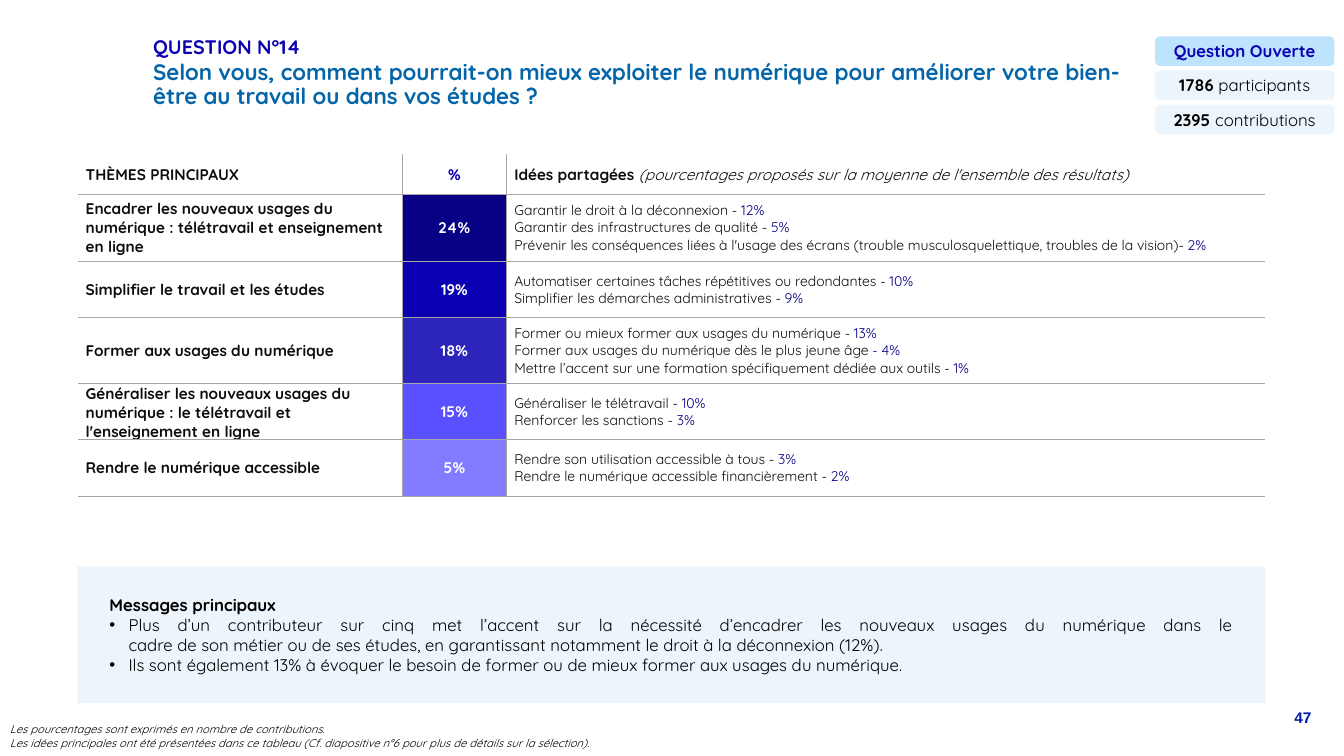
"""Builds the survey slide for question 14: themes table, key messages and participation figures."""
import pptx
import pptx.dml.color
import pptx.enum.shapes
import pptx.enum.text
import pptx.oxml
import pptx.oxml.ns
import pptx.util
from lxml import etree

Cm = pptx.util.Cm
RGBColor = pptx.dml.color.RGBColor
ALIGN = pptx.enum.text.PP_ALIGN
MIDDLE = pptx.enum.text.MSO_ANCHOR.MIDDLE
SHAPES = pptx.enum.shapes.MSO_SHAPE
qn = pptx.oxml.ns.qn

BLACK = RGBColor(0x00, 0x00, 0x00)
INK = RGBColor(0x0D, 0x0D, 0x0D)
WHITE = RGBColor(0xFF, 0xFF, 0xFF)
TITLE_BLUE = RGBColor(0x04, 0x65, 0xA9)
ROYAL = RGBColor(0x0B, 0x00, 0xB2)
NAVY = RGBColor(0x08, 0x00, 0x85)
VIOLET = RGBColor(0x44, 0x38, 0xFF)
LILAC = RGBColor(0x82, 0x7A, 0xFF)
PALE = RGBColor(0xEC, 0xF5, 0xFB)
SKY = RGBColor(0xBD, 0xE3, 0xFD)
PAGE_BLUE = RGBColor(0x01, 0x1C, 0xA3)
GREY = RGBColor(0xA5, 0xA6, 0xA5)


def write(para, spans, size, color, bold=None, italic=None, align=ALIGN.LEFT, face="Quicksand"):
    """Fill a paragraph with (text, font overrides) spans."""
    para.alignment = align
    font = para.font
    font.name, font.size, font.bold, font.italic = face, pptx.util.Pt(size), bold, italic
    font.color.rgb = color
    for text, changes in spans:
        span = para.add_run()
        span.text = text
        for name, value in changes.items():
            if name == "color":
                span.font.color.rgb = value
            else:
                setattr(span.font, name, value)


def add_box(left, top, width, height, shape=None, fill=None):
    """Add a wrapped text box, or a filled shape without outline."""
    place = Cm(left), Cm(top), Cm(width), Cm(height)
    if shape is None:
        box = page.shapes.add_textbox(*place)
    else:
        box = page.shapes.add_shape(shape, *place)
        box.shadow.inherit = False
        box.fill.solid()
        box.fill.fore_color.rgb = fill
        box.line.fill.background()
    box.text_frame.word_wrap = True
    return box


deck = pptx.Presentation()
deck.slide_width, deck.slide_height = Cm(33.87), Cm(19.05)
page = deck.slides.add_slide(deck.slide_layouts[6])

headings = [
    ("QUESTION N°14", 0.86, 28.7, 0.69, 14, ROYAL),
    ("Selon vous, comment pourrait-on mieux exploiter le numérique pour améliorer votre "
     "bien-être au travail ou dans vos études\u00a0?", 1.63, 25.12, 1.02, 16, TITLE_BLUE),
]
for text, top, width, height, size, color in headings:
    box = add_box(3.61, top, width, height)
    box.text_frame.vertical_anchor = MIDDLE
    para = box.text_frame.paragraphs[0]
    para.line_spacing = 0.9
    write(para, [(text, {})], size, color, bold=True)

badges = [
    ([("Question Ouverte", {})], SKY, ROYAL),
    ([("1786 ", {}), ("participants", {"bold": False})], PALE, BLACK),
    ([("2395 ", {}), ("contributions", {"bold": False})], PALE, BLACK),
]
for index, (spans, fill, color) in enumerate(badges):
    badge = add_box(29.11, 0.92 + index * 0.86, 4.52, 0.74, SHAPES.ROUNDED_RECTANGLE, fill)
    badge.text_frame.vertical_anchor = MIDDLE
    write(badge.text_frame.paragraphs[0], spans, 12, color, bold=True, align=ALIGN.CENTER)

themes = [
    ("Encadrer les nouveaux usages du numérique : télétravail et enseignement en ligne",
     "24%", NAVY, 100, 1.7,
     [("Garantir le droit à la déconnexion - ", "12%"),
      ("Garantir des infrastructures de qualité - ", "5%"),
      ("Prévenir les conséquences liées à l'usage des écrans "
       "(trouble musculosquelettique, troubles de la vision)- ", "2%")]),
    ("Simplifier le travail et les études", "19%", ROYAL, 100, 1.42,
     [("Automatiser certaines tâches répétitives ou redondantes - ", "10%"),
      ("Simplifier les démarches administratives - ", "9%")]),
    ("Former aux usages du numérique", "18%", ROYAL, 86, 1.65,
     [("Former ou mieux former aux usages du numérique - ", "13%"),
      ("Former aux usages du numérique dès le plus jeune âge ", "- 4%"),
      ("Mettre l’accent sur une formation spécifiquement dédiée aux outils - ", "1%")]),
    ("Généraliser les nouveaux usages du numérique : le télétravail et l'enseignement en ligne",
     "15%", VIOLET, 88, 1.42,
     [("Généraliser le télétravail - ", "10%"), ("Renforcer les sanctions - ", "3%")]),
    ("Rendre le numérique accessible", "5%", LILAC, 100, 1.42,
     [("Rendre son utilisation accessible à tous - ", "3%"),
      ("Rendre le numérique accessible financièrement - ", "2%")]),
]
table = page.shapes.add_table(
    len(themes) + 1, 3, Cm(1.96), Cm(3.89), Cm(29.93), Cm(8.6)).table
table.first_row = table.horz_banding = False
for column, width in zip(table.columns, (8.18, 2.62, 19.13)):
    column.width = Cm(width)
for row, height in zip(table.rows, [0.99] + [theme[4] for theme in themes]):
    row.height = Cm(height)

for row_index, row in enumerate(table.rows):
    for column_index, cell in enumerate(row.cells):
        cell.vertical_anchor = MIDDLE
        cell.margin_left = cell.margin_right = Cm(0.2)
        cell.margin_top, cell.margin_bottom = Cm(0.02), Cm(0)
        sides = {"L": column_index > 0, "R": column_index < 2, "T": row_index > 0, "B": True}
        properties = cell._tc.get_or_add_tcPr()
        for side, shown in sides.items():
            line = etree.SubElement(properties, qn("a:ln" + side), w="3175")
            if shown:
                paint = etree.SubElement(line, qn("a:solidFill"))
                etree.SubElement(paint, qn("a:srgbClr"), val=str(GREY))
            else:
                etree.SubElement(line, qn("a:noFill"))
        cell.fill.background()

header_note = "(pourcentages proposés sur la moyenne de l'ensemble des résultats)"
headers = [
    ([("THÈMES PRINCIPAUX", {})], INK, ALIGN.LEFT),
    ([("%", {})], ROYAL, ALIGN.CENTER),
    ([("Idées partagées ", {}), (header_note, {"bold": False, "italic": True})], INK, ALIGN.LEFT),
]
for cell, (spans, color, align) in zip(table.rows[0].cells, headers):
    write(cell.text_frame.paragraphs[0], spans, 11, color, bold=True, align=align)

for row_index, (theme, share, fill, opacity, height, ideas) in enumerate(themes, 1):
    theme_cell, share_cell, ideas_cell = table.rows[row_index].cells
    write(theme_cell.text_frame.paragraphs[0], [(theme, {})], 11, INK, bold=True)
    write(share_cell.text_frame.paragraphs[0], [(share, {})], 11, WHITE,
          bold=True, align=ALIGN.CENTER)
    share_cell.fill.solid()
    share_cell.fill.fore_color.rgb = fill
    if opacity < 100:
        paint = share_cell._tc.tcPr.find(qn("a:solidFill"))
        etree.SubElement(paint[0], qn("a:alpha"), val=str(opacity * 1000))
    frame = ideas_cell.text_frame
    for index, (idea, idea_share) in enumerate(ideas):
        para = frame.add_paragraph() if index else frame.paragraphs[0]
        write(para, [(idea, {}), (idea_share, {"color": NAVY})], 10, INK, bold=False)

add_box(1.96, 14.27, 29.93, 3.45, SHAPES.RECTANGLE, PALE)
messages = add_box(2.51, 14.86, 28.83, 2.31).text_frame
write(messages.paragraphs[0], [("Messages principaux", {})], 12, BLACK,
      bold=True, align=ALIGN.JUSTIFY)
bullets = [
    ["Plus d’un contributeur sur cinq met l’accent sur la nécessité d’encadrer les nouveaux "
     "usages du numérique dans le",
     "cadre de son métier ou de ses études, en garantissant notamment le droit à la "
     "déconnexion (12%)."],
    ["Ils sont également 13% à évoquer le besoin de former ou de mieux former aux usages "
     "du numérique."],
]
for lines in bullets:
    para = messages.add_paragraph()
    properties = para._p.get_or_add_pPr()
    properties.set("marL", str(Cm(0.48)))
    properties.set("indent", str(-Cm(0.48)))
    etree.SubElement(properties, qn("a:buFont"), typeface="Arial")
    etree.SubElement(properties, qn("a:buChar"), char="•")
    write(para, [(lines[0], {})], 12, BLACK, bold=False, align=ALIGN.JUSTIFY)
    for line in lines[1:]:
        para.add_line_break()
        para.add_run().text = line

footnotes = [
    "Les pourcentages sont exprimés en nombre de contributions.",
    "Les idées principales ont été présentées dans ce tableau "
    "(Cf. diapositive n°6 pour plus de détails sur la sélection).",
]
frame = add_box(0, 18.08, 18.72, 0.94).text_frame
for index, note in enumerate(footnotes):
    para = frame.add_paragraph() if index else frame.paragraphs[0]
    write(para, [(note, {})], 8, BLACK, italic=True, align=ALIGN.JUSTIFY)

page_number = add_box(28.3, 17.73, 5, 1.32)
write(page_number.text_frame.paragraphs[0], [("47", {})], 11, PAGE_BLUE,
      bold=True, align=ALIGN.RIGHT, face="Arial")

deck.save("out.pptx")
